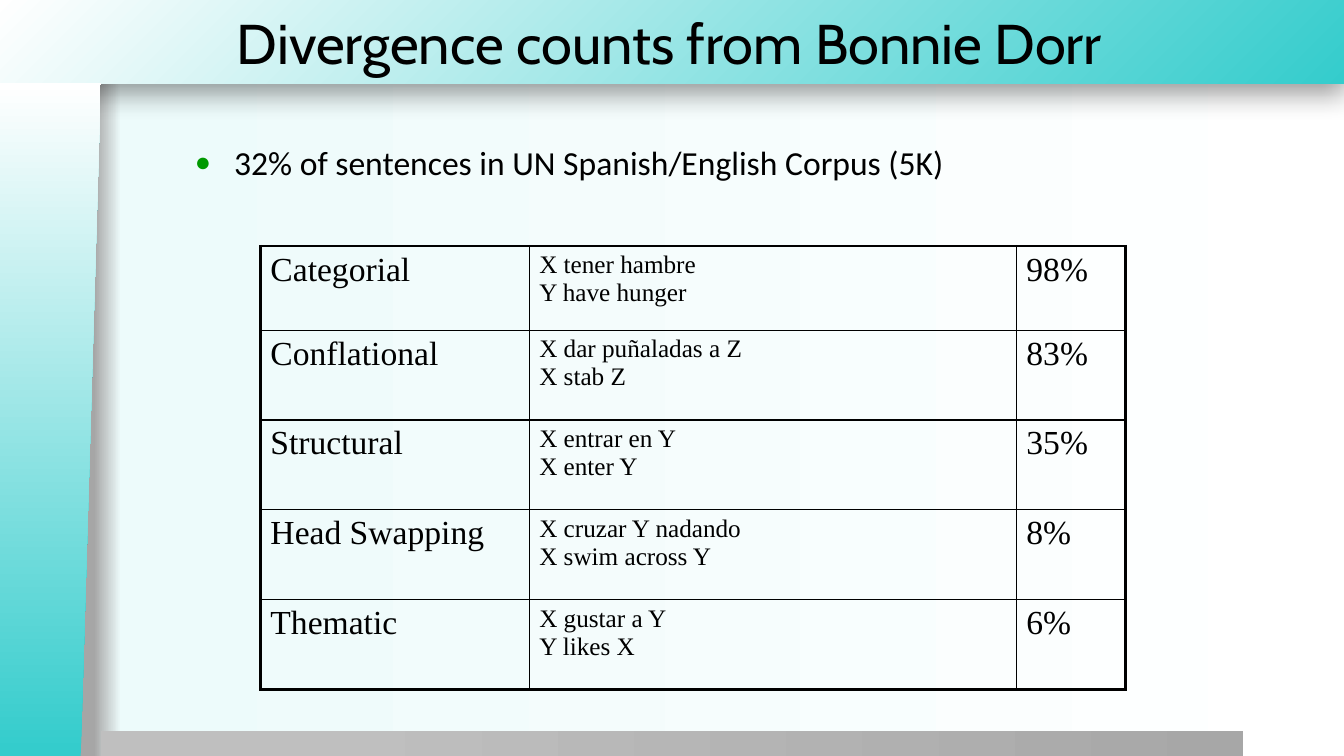
"""Builds the slide on divergence counts between Spanish and English."""
from dataclasses import dataclass
from typing import Any

from lxml import etree
from pptx import Presentation
from pptx.dml.color import RGBColor
from pptx.enum.shapes import MSO_SHAPE
from pptx.enum.text import MSO_ANCHOR, MSO_AUTO_SIZE, PP_ALIGN
from pptx.oxml.ns import qn
from pptx.util import Inches, Length, Pt

RECT = MSO_SHAPE.RECTANGLE
SLANT = MSO_SHAPE.FLOWCHART_MANUAL_INPUT
MIDDLE, TOP = MSO_ANCHOR.MIDDLE, MSO_ANCHOR.TOP
LEFT = PP_ALIGN.LEFT
FIXED = MSO_AUTO_SIZE.NONE
COLS, ROWS = 160, 90


@dataclass(frozen=True)
class Theme:
    ink: str = "000000"
    teal: str = "34CCCC"
    pale: str = "EDFBFB"
    white: str = "FFFFFF"
    edge: str = "A6A6A6"
    light: str = "BFBFBF"
    grey: str = "A7A7A7"
    dot: str = "009900"
    head: str = "Cabin"
    text: str = "Calibri"
    serif: str = "Times New Roman"
    large: float = 40
    main: float = 24
    small: float = 18
    thick: float = 2.25
    thin: float = 1


@dataclass(frozen=True)
class Box:
    left: float
    top: float
    width: float
    height: float


@dataclass(frozen=True)
class Band:
    box: Box
    kind: Any
    stops: tuple[tuple[int, str], ...]
    turn: int = 0
    radial: bool = False
    shade: bool = False


@dataclass(frozen=True)
class Entry:
    name: str
    sample: str
    share: str


LOOK = Theme()
BANDS = (
    Band(Box(0, 0, 160, 10), RECT, ((0, LOOK.teal), (100, LOOK.white)),
         radial=True, shade=True),
    Band(Box(12, 87, 136, 3.1), RECT, ((20, LOOK.light), (100, LOOK.grey))),
    Band(Box(-34.1, 44, 80.2, 12), SLANT, ((1, LOOK.teal), (100, LOOK.white)), turn=270),
)
BACK = ((7, LOOK.edge), (9, LOOK.pale), (100, LOOK.white))
TITLE = Box(27, 0, 111, 10)
BODY = Box(22, 16.3, 126, 7.7)
GRID = Box(31, 29.3, 103, 52.8)
WIDTHS = (32, 58, 13)
HEIGHTS = (10, 10.7, 10.7, 10.7, 10.7)
SIZES = (LOOK.main, LOOK.small, LOOK.main)
ENTRIES = (
    Entry("Categorial", "X tener hambre\nY have hunger", "98%"),
    Entry("Conflational", "X dar puñaladas a Z\nX stab Z", "83%"),
    Entry("Structural", "X entrar en Y\nX enter Y", "35%"),
    Entry("Head Swapping", "X cruzar Y nadando\nX swim across Y", "8%"),
    Entry("Thematic", "X gustar a Y\nY likes X", "6%"),
)


def unit(count: float) -> Length:
    return Inches(count / 12)


def place(box: Box) -> tuple[Length, ...]:
    return unit(box.left), unit(box.top), unit(box.width), unit(box.height)


def node(root: Any, tag: str, **attrs: Any) -> Any:
    return etree.SubElement(root, qn(tag), {key: str(val) for key, val in attrs.items()})


def tint(root: Any, color: str) -> Any:
    return node(root, "a:srgbClr", val=color)


def blend(owner: Any, stops: tuple[tuple[int, str], ...], radial: bool = False) -> None:
    grad = next(owner.element.iter(qn("a:gradFill")))
    for child in list(grad):
        grad.remove(child)
    group = node(grad, "a:gsLst")
    for spot, color in stops:
        tint(node(group, "a:gs", pos=spot * 1000), color)
    if radial:
        focus = node(grad, "a:path", path="circle")
        node(focus, "a:fillToRect", l=100000, t=100000)
    else:
        node(grad, "a:lin", ang=0, scaled=0)


def style(frame: Any, font: str, size: float) -> None:
    for para in frame.paragraphs:
        for run in para.runs:
            run.font.name = font
            run.font.size = Pt(size)
            run.font.color.rgb = RGBColor.from_string(LOOK.ink)


def add_band(slide: Any, master: Any, band: Band, depth: int) -> None:
    shape = slide.shapes.add_shape(band.kind, *place(band.box))
    shape.shadow.inherit = False
    shape.line.fill.background()
    shape.fill.gradient()
    blend(shape, band.stops, band.radial)
    if band.turn:
        shape.rotation = band.turn
        next(shape.element.iter(qn("a:xfrm"))).set("flipV", "1")
    if band.shade:
        effect = next(shape.element.iter(qn("a:effectLst")))
        shadow = node(effect, "a:outerShdw", blurRad=Pt(20), dist=Pt(6),
                      dir=5400000, algn="t", rotWithShape=0)
        node(tint(shadow, LOOK.ink), "a:alpha", val=40000)
    master.shapes.element.insert(2 + depth, shape.element)


def fill_box(shape: Any, box: Box, text: str, font: str, size: float, anchor: Any) -> Any:
    shape.left, shape.top, shape.width, shape.height = place(box)
    frame = shape.text_frame
    frame.text = text
    frame.word_wrap = True
    frame.auto_size = FIXED
    frame.vertical_anchor = anchor
    para = frame.paragraphs[0]
    para.alignment = LEFT
    style(frame, font, size)
    return para


def add_dot(para: Any) -> None:
    props = para._p.get_or_add_pPr()
    props.set("marL", str(Inches(0.39)))
    props.set("indent", str(-Inches(0.39)))
    tint(node(props, "a:buClr"), LOOK.dot)
    node(props, "a:buSzPct", val=80000)
    node(props, "a:buChar", char="●")
    para.space_before = Pt(0)


def rule(cell: Any, row: int, col: int) -> None:
    props = cell._tc.get_or_add_tcPr()
    outer = {"L": col == 0, "R": col == len(WIDTHS) - 1,
             "T": row == 0, "B": row == len(HEIGHTS) - 1}
    for side, edge in outer.items():
        line = node(props, f"a:ln{side}", w=Pt(LOOK.thick if edge else LOOK.thin))
        tint(node(line, "a:solidFill"), LOOK.ink)
    cell.fill.background()


def add_grid(slide: Any) -> None:
    table = slide.shapes.add_table(len(HEIGHTS), len(WIDTHS), *place(GRID)).table
    table.first_row = table.horz_banding = False
    for col, width in enumerate(WIDTHS):
        table.columns[col].width = unit(width)
    for row, (height, entry) in enumerate(zip(HEIGHTS, ENTRIES)):
        table.rows[row].height = unit(height)
        for col, text in enumerate((entry.name, entry.sample, entry.share)):
            cell = table.cell(row, col)
            cell.text_frame.text = text
            style(cell.text_frame, LOOK.serif, SIZES[col])
            rule(cell, row, col)


def main() -> None:
    deck = Presentation()
    deck.slide_width, deck.slide_height = unit(COLS), unit(ROWS)
    slide = deck.slides.add_slide(deck.slide_layouts[1])
    slide.background.fill.gradient()
    blend(slide, BACK)
    for depth, band in enumerate(BANDS):
        add_band(slide, deck.slide_master, band, depth)
    fill_box(slide.shapes.title, TITLE, "Divergence counts from Bonnie Dorr",
             LOOK.head, LOOK.large, MIDDLE)
    para = fill_box(slide.placeholders[1], BODY,
                    "32% of sentences in UN Spanish/English Corpus (5K)",
                    LOOK.text, LOOK.main, TOP)
    add_dot(para)
    add_grid(slide)
    deck.save("out.pptx")


if __name__ == "__main__":
    main()
